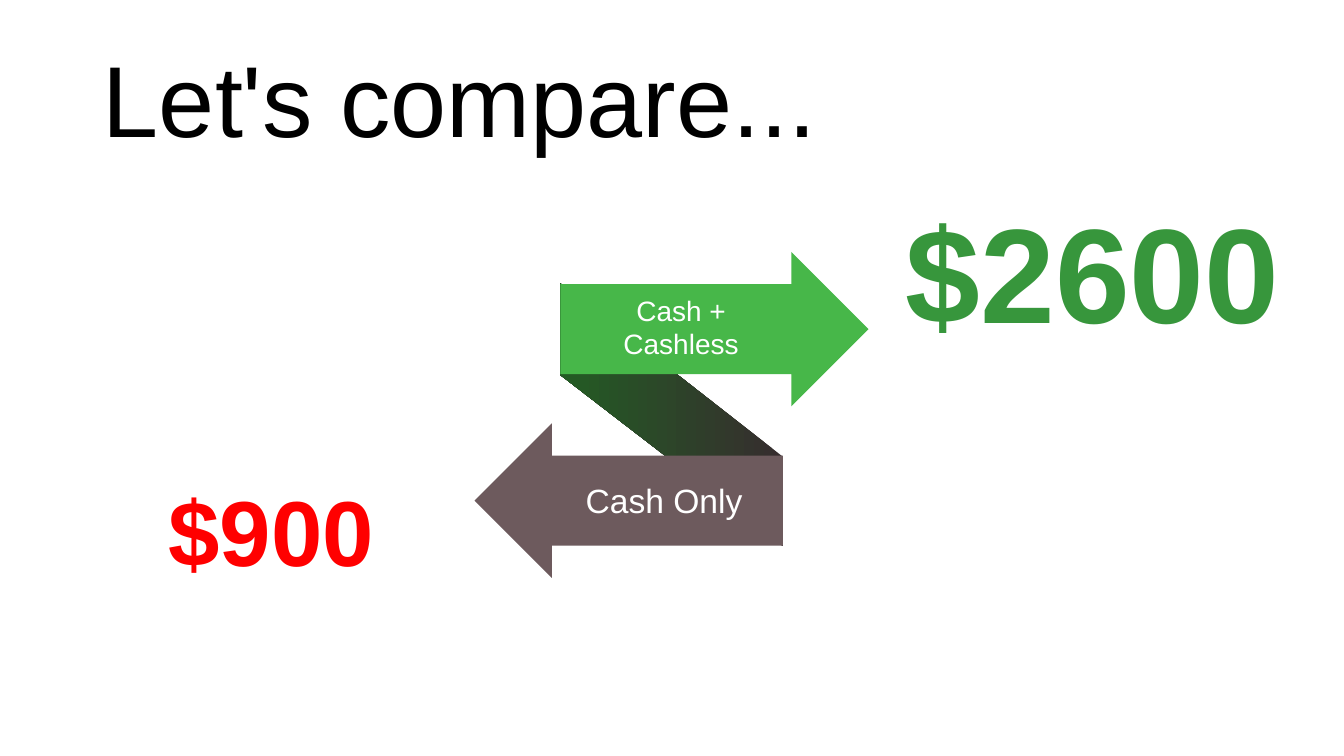
from pptx import Presentation
from pptx.dml.color import RGBColor
from pptx.enum.shapes import MSO_SHAPE
from pptx.enum.text import MSO_ANCHOR, MSO_AUTO_SIZE, PP_ALIGN
from pptx.oxml.ns import qn
from pptx.util import Cm, Pt
from lxml import etree

BLACK = RGBColor(0x00, 0x00, 0x00)
WHITE = RGBColor(0xFF, 0xFF, 0xFF)
RED = RGBColor(0xFF, 0x00, 0x00)
GREEN = RGBColor(0x37, 0x96, 0x3C)
ARROW_GREEN = RGBColor(0x47, 0xB7, 0x49)
ARROW_BROWN = RGBColor(0x6D, 0x5A, 0x5D)
RIBBON_DARK = RGBColor(0x36, 0x2D, 0x2E)
RIBBON_GREEN = RGBColor(0x23, 0x5C, 0x24)
RIGHT_ARROW = MSO_SHAPE.RIGHT_ARROW
TOP, MIDDLE = MSO_ANCHOR.TOP, MSO_ANCHOR.MIDDLE
LEFT, CENTER = PP_ALIGN.LEFT, PP_ALIGN.CENTER
NO_AUTOFIT = MSO_AUTO_SIZE.NONE
FONT = "Arial"
TWO_CONTENT = 3


def place(sp, left, top, width, height):
    sp.left, sp.top = Cm(left), Cm(top)
    sp.width, sp.height = Cm(width), Cm(height)


def write(sp, text, size, color, align=CENTER, anchor=TOP, bold=False, spacing=1.0):
    tf = sp.text_frame
    tf.text = text
    tf.word_wrap = True
    tf.auto_size = NO_AUTOFIT
    tf.vertical_anchor = anchor
    p = tf.paragraphs[0]
    p.alignment = align
    p.line_spacing = spacing
    p.space_before = Pt(0)
    font = p.runs[0].font
    font.name, font.size, font.bold = FONT, Pt(size), bold
    font.color.rgb = color


def add_title(s, text, box):
    sp = s.shapes.title
    place(sp, *box)
    write(sp, text, 72, BLACK, LEFT, MIDDLE, spacing=0.9)


def add_amount(s, idx, text, size, color, box):
    sp = s.placeholders[idx]
    place(sp, *box)
    write(sp, text, size, color, bold=True, spacing=0.9)
    pPr = sp.text_frame.paragraphs[0]._p.get_or_add_pPr()
    pPr.set("marL", "0")
    pPr.set("indent", "0")
    etree.SubElement(pPr, qn("a:buNone"))


def add_ribbon(s, left, top):
    points = [(left + x, top + y) for x, y in ((0, 0), (5.61, 4.37), (5.61, 6.63), (0, 2.31))]
    corners = [(Cm(x), Cm(y)) for x, y in points]
    builder = s.shapes.build_freeform(*corners[0])
    builder.add_line_segments(corners[1:], close=True)
    sp = builder.convert_to_shape()
    sp.shadow.inherit = False
    sp.line.fill.background()
    sp.fill.gradient()
    sp.fill.gradient_angle = 180
    for stop, position, color in zip(sp.fill.gradient_stops, (0, 1), (RIBBON_DARK, RIBBON_GREEN)):
        stop.position = position
        stop.color.rgb = color


def add_arrow(s, left, top, color, rotation):
    sp = s.shapes.add_shape(RIGHT_ARROW, Cm(left), Cm(top), Cm(7.77), Cm(3.89))
    sp.adjustments[0], sp.adjustments[1] = 0.584, 0.5
    sp.rotation = rotation
    sp.shadow.inherit = False
    sp.fill.solid()
    sp.fill.fore_color.rgb = color
    sp.line.fill.background()


def add_arrows(s, left, top):
    add_ribbon(s, left + 2.16, top + 0.79)
    add_arrow(s, left + 2.16, top, ARROW_GREEN, 0)
    add_arrow(s, left, top + 4.32, ARROW_BROWN, 180)
    labels = (
        ("Cash + Cashless", 20, 2.46, 0.91, 1.96),
        ("Cash Only", 24, 2.03, 5.61, 1.27),
    )
    for text, size, x, y, height in labels:
        sp = s.shapes.add_textbox(Cm(left + x), Cm(top + y), Cm(5.49), Cm(height))
        write(sp, text, size, WHITE)


def main():
    prs = Presentation()
    prs.slide_width, prs.slide_height = Cm(33.87), Cm(19.05)
    s = prs.slides.add_slide(prs.slide_layouts[TWO_CONTENT])
    add_title(s, "Let's compare...", (2.34, 0.58, 31.19, 4.14))
    add_amount(s, 1, "$900", 66, RED, (2.24, 12.14, 9.19, 6.71))
    add_amount(s, 2, "$2600", 96, GREEN, (22.22, 5.11, 10.62, 12.09))
    add_arrows(s, 11.96, 6.35)
    prs.save("out.pptx")


if __name__ == "__main__":
    main()
